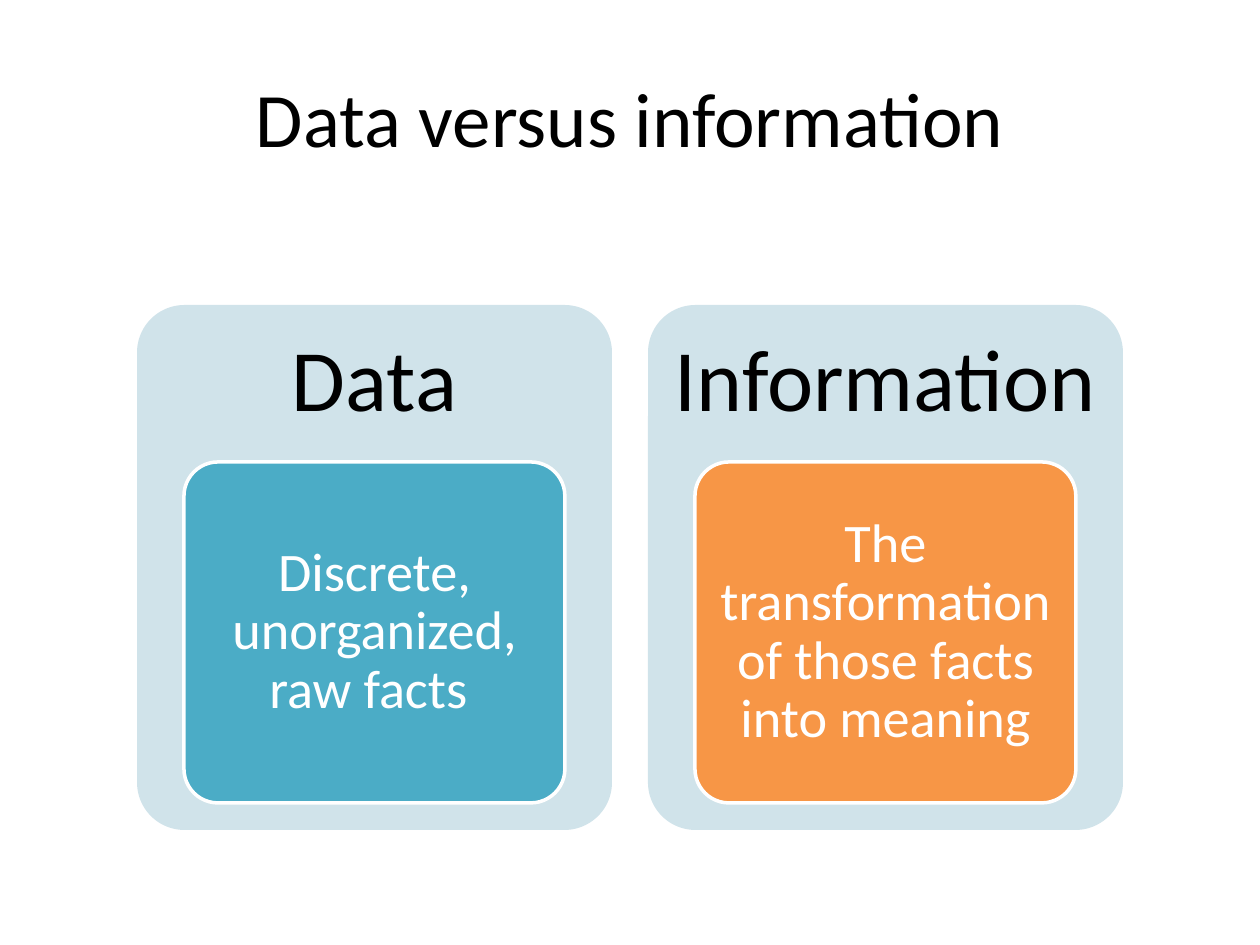
"""Build a slide that sets data beside information in two panels."""
import pptx
import pptx.dml.color
import pptx.enum.shapes
import pptx.enum.text
import pptx.util

PX = 914400 // 126


def color(value):
    return pptx.dml.color.RGBColor.from_string(value)


def write(box, text, size, ink, inset_x, inset_y, spacing):
    frame = box.text_frame
    frame.text = text
    frame.word_wrap = True
    frame.vertical_anchor = pptx.enum.text.MSO_ANCHOR.MIDDLE
    frame.margin_left = frame.margin_right = inset_x * PX
    frame.margin_top = frame.margin_bottom = inset_y * PX
    para = frame.paragraphs[0]
    para.alignment = pptx.enum.text.PP_ALIGN.CENTER
    para.line_spacing = spacing
    span = para.runs[0]
    span.font.name = "Calibri"
    span.font.size = pptx.util.Pt(size)
    span.font.color.rgb = color(ink)


deck = pptx.Presentation()
deck.slide_width = 1260 * PX
deck.slide_height = 945 * PX
page = deck.slides.add_slide(deck.slide_layouts[6])
rounded = pptx.enum.shapes.MSO_SHAPE.ROUNDED_RECTANGLE

title = page.shapes.add_textbox(63 * PX, 38 * PX, 1134 * PX, 157 * PX)
write(title, "Data versus information", 44, "000000", 13, 6, 1.0)

columns = [
    ("Data", "Discrete, unorganized, raw facts ", "4BACC6"),
    ("Information", "The transformation of those facts into meaning", "F79646"),
]
for index, (heading, meaning, fill) in enumerate(columns):
    left = 137 + 511 * index

    panel = page.shapes.add_shape(rounded, left * PX, 305 * PX, 475 * PX, 525 * PX)
    panel.adjustments[0] = 0.1
    panel.shadow.inherit = False
    panel.fill.solid()
    panel.fill.fore_color.rgb = color("D0E3EA")
    panel.line.fill.background()

    header = page.shapes.add_textbox(left * PX, 305 * PX, 475 * PX, 157 * PX)
    write(header, heading, 50, "000000", 26, 26, 0.9)

    card = page.shapes.add_shape(rounded, (left + 47) * PX, 462 * PX, 381 * PX, 341 * PX)
    card.adjustments[0] = 0.1
    card.shadow.inherit = False
    card.fill.solid()
    card.fill.fore_color.rgb = color(fill)
    card.line.color.rgb = color("FFFFFF")
    card.line.width = pptx.util.Pt(2)
    write(card, meaning, 31, "FFFFFF", 1, 1, 0.9)

deck.save("out.pptx")
